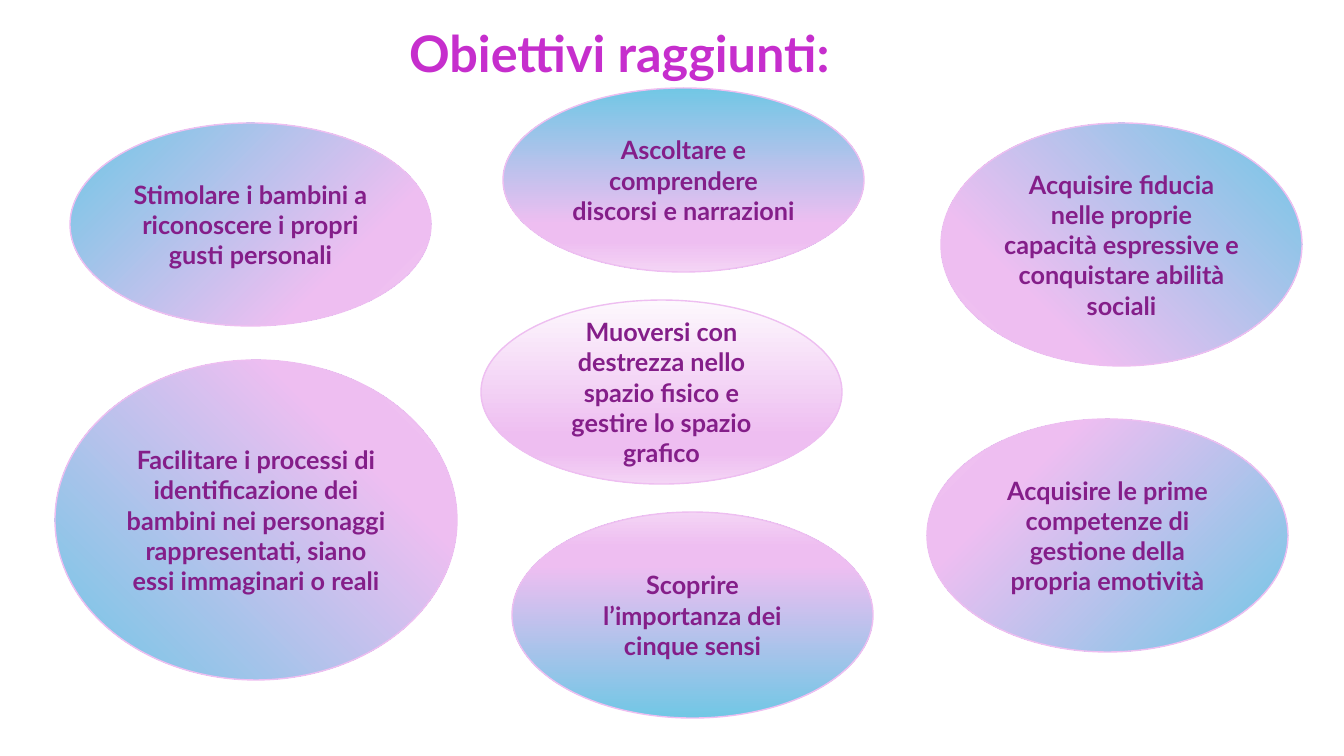
from copy import deepcopy

from pptx import Presentation
from pptx.dml.color import RGBColor
from pptx.enum.shapes import MSO_SHAPE as Shape
from pptx.enum.text import MSO_ANCHOR as Anchor, MSO_AUTO_SIZE as AutoSize, PP_ALIGN as Align
from pptx.oxml.ns import qn
from pptx.util import Emu, Pt

EMU_PER_PX = 914400 / 100.8
SKY, SNOW, PINK, PALE = "71C7E5", "FDF8FD", "EEBEF1", "F4D4F5"
MAGENTA, PURPLE = "C62ECD", "841E89"

GOALS = [
    ("Acquisire fiducia nelle proprie capacità espressive e conquistare abilità sociali",
     (941, 123, 361, 243), SKY, 135),
    ("Stimolare i bambini a riconoscere i propri gusti personali",
     (70, 123, 361, 203), SKY, 45),
    ("Ascoltare e comprendere discorsi e narrazioni",
     (503, 88, 361, 184), SKY, 90),
    ("Scoprire l’importanza dei cinque sensi",
     (512, 512, 361, 206), SKY, 270),
    ("Muoversi con destrezza nello spazio fisico e gestire lo spazio grafico",
     (481, 300, 361, 184), SNOW, 90),
    ("Acquisire le prime competenze di gestione della propria emotività",
     (927, 419, 361, 233), SKY, 225),
    ("Facilitare i processi di identificazione dei bambini nei personaggi "
     "rappresentati, siano essi immaginari o reali",
     (55, 360, 402, 320), SKY, 315),
]


def px(length):
    return Emu(round(length * EMU_PER_PX))


def color(code):
    return RGBColor.from_string(code)


def write(frame, text, size=18, fill=PURPLE, align=Align.CENTER, anchor=Anchor.MIDDLE):
    frame.word_wrap = True
    frame.auto_size = AutoSize.NONE
    frame.vertical_anchor = anchor
    para = frame.paragraphs[0]
    para.alignment = align
    span = para.add_run()
    span.text = text
    span.font.name = "Lato"
    span.font.size = Pt(size)
    span.font.bold = True
    span.font.color.rgb = color(fill)


class GoalSlide:
    """Holds the current slide and draws its title and gradient ovals."""

    def __init__(self, deck):
        self.slide = deck.slides.add_slide(deck.slide_layouts[5])

    def title(self, text, bounds):
        box = self.slide.shapes.title
        box.left, box.top, box.width, box.height = map(px, bounds)
        write(box.text_frame, text, size=36, fill=MAGENTA, align=Align.LEFT, anchor=Anchor.TOP)

    def oval(self, text, bounds, start, angle):
        oval = self.slide.shapes.add_shape(Shape.OVAL, *map(px, bounds))
        oval.shadow.inherit = False
        self.gradient(oval, [(0, start), (0.74, PINK), (0.83, PINK), (1, PALE)], angle)
        oval.line.color.rgb = color(PINK)
        oval.line.width = Pt(1)
        write(oval.text_frame, text)

    def gradient(self, shape, stops, angle):
        shape.fill.gradient()
        shape.fill.gradient_angle = (360 - angle) % 360
        stop_list = next(shape.element.iter(qn("a:gsLst")))
        while len(stop_list) < len(stops):
            stop_list.append(deepcopy(stop_list[0]))
        for stop, (position, code) in zip(shape.fill.gradient_stops, stops):
            stop.position = position
            stop.color.rgb = color(code)


def main():
    deck = Presentation()
    deck.slide_width, deck.slide_height = px(1344), px(756)
    page = GoalSlide(deck)
    page.title("Obiettivi raggiunti:", (399, 17, 672, 72))
    for goal in GOALS:
        page.oval(*goal)
    deck.save("out.pptx")


if __name__ == "__main__":
    main()
